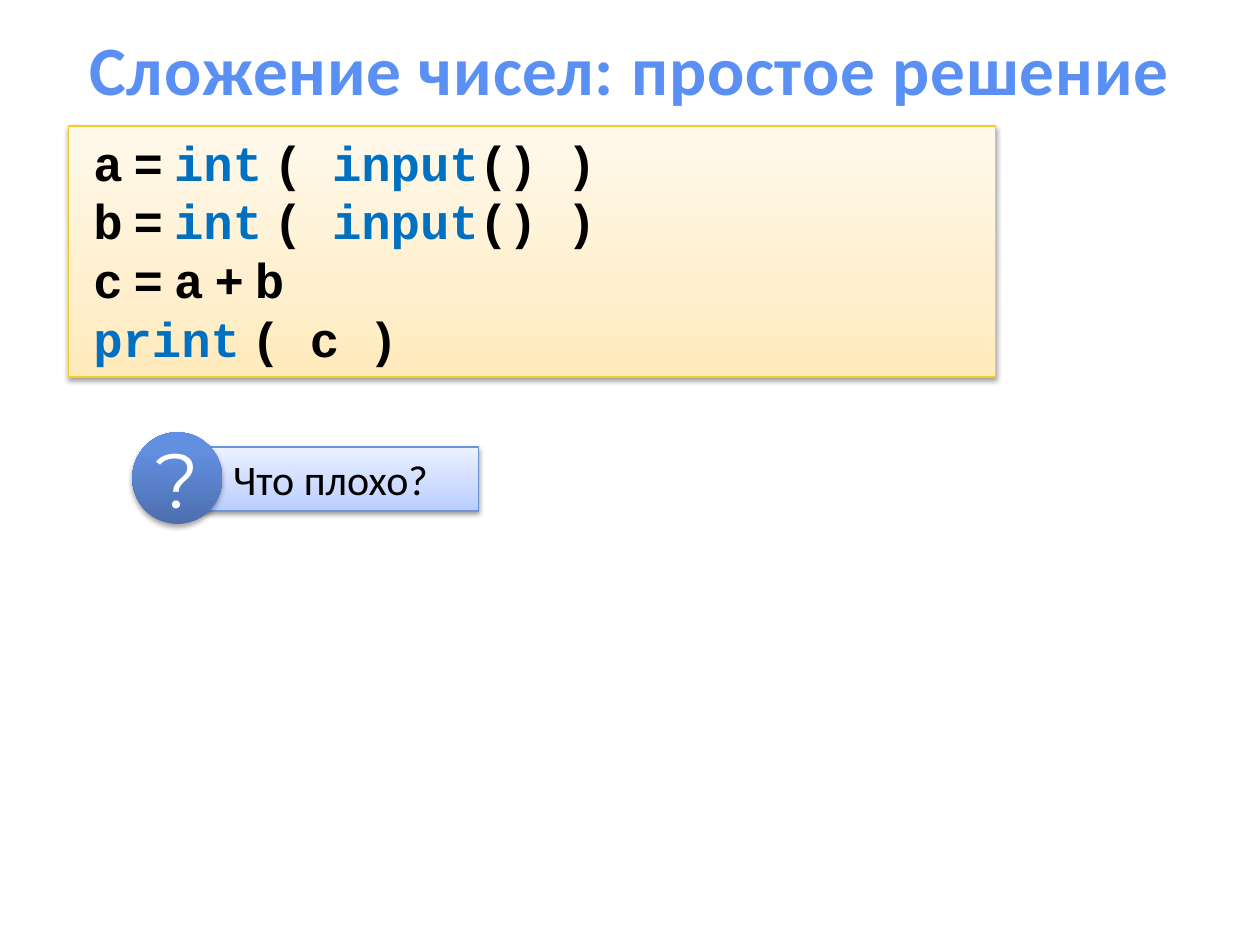
from pptx import Presentation
from pptx.dml.color import RGBColor
from pptx.enum.shapes import MSO_SHAPE
from pptx.enum.text import MSO_ANCHOR, PP_ALIGN
from pptx.oxml.ns import qn
from pptx.util import Pt
from lxml.etree import SubElement

BLACK = RGBColor(0x00, 0x00, 0x00)
WHITE = RGBColor(0xFF, 0xFF, 0xFF)
BLUE = RGBColor(0x00, 0x70, 0xC0)
TITLE = RGBColor(0x5A, 0x90, 0xF4)
GOLD = RGBColor(0xF4, 0xCB, 0x27)
STEEL = RGBColor(0x70, 0x94, 0xD7)

CREAM = [(0, "FFEAB9"), (35, "FFEFCE"), (100, "FFF9EC")]
PALE = [(0, "B8CCFF"), (35, "CCDAFF"), (100, "EBF1FF")]
DEEP = [(0, "4C6EAD"), (80, "638FE1"), (100, "618FE4")]

HEAD = "Сложение чисел: простое решение"
NAMES = ("int ", "input", "print ")
CODE = [
    ["a = ", "int ", "( ", "input", "() )"],
    ["b = ", "int ", "( ", "input", "() )"],
    ["c = a + b"],
    ["print ", "( c )"],
]


def add_color(parent, tag, value):
    node = SubElement(parent, qn(tag))
    SubElement(node, qn("a:srgbClr")).set("val", value)
    return node


def add_box(shapes, kind, place, stops, line, alpha, drop):
    box = shapes.add_shape(kind, *[Pt(n) for n in place])
    box.fill.gradient()
    box.fill.gradient_angle = 90
    bar = box.fill._fill._gradFill.find(qn("a:gsLst"))
    for old in list(bar):
        bar.remove(old)
    for pos, value in stops:
        add_color(bar, "a:gs", value).set("pos", str(pos * 1000))
    if line is None:
        box.line.fill.background()
    else:
        box.line.color.rgb = line
        box.line.width = Pt(0.75)
    box.shadow.inherit = False
    effect = box._element.spPr.find(qn("a:effectLst"))
    shade = add_color(effect, "a:outerShdw", "000000")
    for key, value in (("blurRad", Pt(3.1)), ("dist", Pt(drop)),
                       ("dir", 5400000), ("rotWithShape", 0)):
        shade.set(key, str(int(value)))
    SubElement(shade[0], qn("a:alpha")).set("val", str(alpha * 1000))
    return box


def style(run, face, size, color, bold=False):
    font = run.font
    font.name, font.size, font.bold = face, Pt(size), bold
    font.color.rgb = color


def indent(para, left, first):
    props = para._p.get_or_add_pPr()
    props.set("marL", str(Pt(left)))
    props.set("indent", str(Pt(first)))


def add_run(para, text, face, color):
    run = para.add_run()
    run.text = text
    style(run, face, 28, color, True)


def add_code(frame):
    frame.vertical_anchor = MSO_ANCHOR.TOP
    for row, parts in enumerate(CODE):
        para = frame.add_paragraph() if row else frame.paragraphs[0]
        para.alignment = PP_ALIGN.JUSTIFY
        indent(para, 14.4, -7.2)
        for part in parts:
            color = BLUE if part in NAMES else BLACK
            if "(" in part:
                add_run(para, part, "Courier New", color)
                continue
            for step, word in enumerate(part.split(" ")):
                if step:
                    add_run(para, " ", "Calibri", color)
                if word:
                    add_run(para, word, "Courier New", color)


def main():
    deck = Presentation()
    deck.slide_width, deck.slide_height = Pt(720), Pt(540)
    slide = deck.slides.add_slide(deck.slide_layouts[5])

    title = slide.shapes.title
    title.left, title.top, title.width, title.height = Pt(0), Pt(16.5), Pt(720), Pt(44)
    frame = title.text_frame
    frame.text = HEAD
    frame.vertical_anchor = MSO_ANCHOR.MIDDLE
    frame.paragraphs[0].alignment = PP_ALIGN.CENTER
    run = frame.paragraphs[0].runs[0]
    style(run, "Calibri", 39.6, TITLE, True)
    run._r.get_or_add_rPr().set("spc", "50")

    panel = add_box(slide.shapes, MSO_SHAPE.RECTANGLE, (39, 72, 530, 143.5),
                    CREAM, GOLD, 38, 1.6)
    add_code(panel.text_frame)

    group = slide.shapes.add_group_shape()
    label = add_box(group.shapes, MSO_SHAPE.RECTANGLE, (112.3, 255.5, 161.3, 36.5),
                    PALE, STEEL, 38, 1.6)
    frame = label.text_frame
    frame.text = "Что плохо?"
    frame.vertical_anchor = MSO_ANCHOR.TOP
    para = frame.paragraphs[0]
    para.alignment = PP_ALIGN.LEFT
    indent(para, 41.8, -28)
    style(para.runs[0], "Calibri", 24, BLACK)

    badge = add_box(group.shapes, MSO_SHAPE.OVAL, (75.6, 247, 51.4, 52.4),
                    DEEP, None, 35, 1.8)
    frame = badge.text_frame
    frame.text = "?"
    frame.word_wrap = False
    frame.vertical_anchor = MSO_ANCHOR.MIDDLE
    frame.paragraphs[0].alignment = PP_ALIGN.CENTER
    style(frame.paragraphs[0].runs[0], "Montserrat", 44, WHITE)

    deck.save("out.pptx")


if __name__ == "__main__":
    main()
